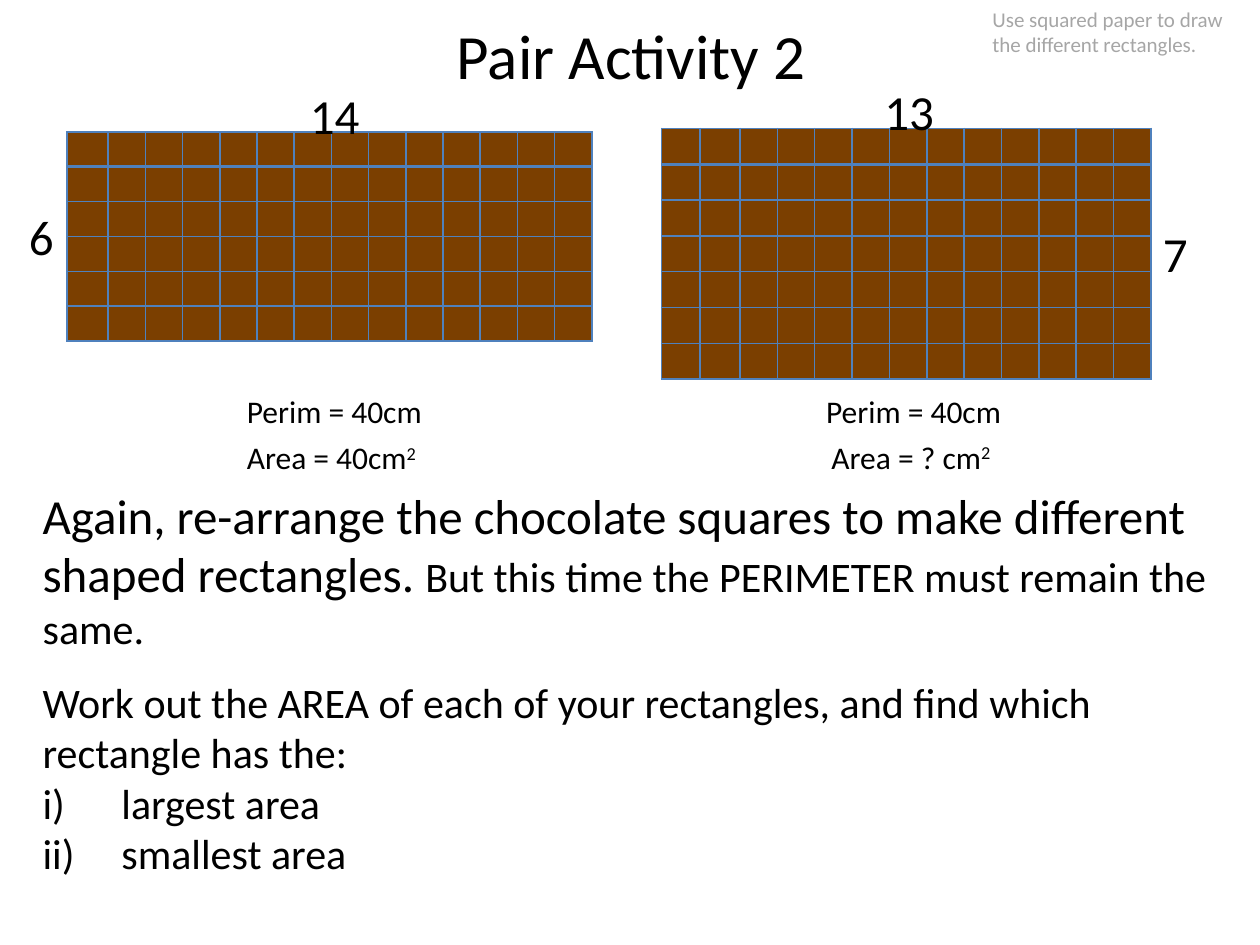
from lxml.etree import SubElement
from pptx import Presentation
from pptx.dml.color import RGBColor
from pptx.enum.text import MSO_AUTO_SIZE
from pptx.oxml.ns import qn
from pptx.util import Pt

BLACK, GREY, CHOCOLATE, GRID_BLUE = "000000", "A6A6A6", "7B3F00", "4F81BD"

# left, top, total width, row height, rows, columns, widths of the leading wider columns
BARS = [
    (38.2, 75.4, 300, 19.92, 6, 14, [23.6]),
    (378, 73.4, 280, 20.47, 7, 13, [22, 22.9]),
]

# Each paragraph is a list of spans: (text, size, superscript)
TITLE = [[("Pair Activity 2", 36, False)]]
HINT = [[("Use squared paper to draw the different rectangles.", 12, False)]]
TASK = [[
    ("Again, re-arrange the chocolate squares to make different shaped rectangles. ", 28, False),
    ("But this time the PERIMETER must remain the same.", 24, False),
]]
QUESTION = [
    [("Work out the AREA of each of your rectangles, and find which rectangle has the:", 24, False)],
    [("largest area", 24, False)],
    [("smallest area", 24, False)],
]
PERIMETER = [[("Perim = 40cm", 18, False)]]
LEFT_AREA = [[("Area = 40cm", 18, False), ("2", 18, True)]]
RIGHT_AREA = [[("Area = ? cm", 18, False), ("2", 18, True)]]

# paragraphs, (left, top, width, height)
LEFT_LABELS = [
    (PERIMETER, (134, 220.5, 116, 29)),
    (LEFT_AREA, (134, 247, 116, 29)),
    ([[("6", 28, False)]], (9.4, 114.5, 29, 41)),
    ([[("14", 28, False)]], (170, 45.5, 43, 41)),
]
RIGHT_LABELS = [
    (PERIMETER, (465, 220.5, 116, 29)),
    (RIGHT_AREA, (468, 246.5, 107, 29)),
    ([[("13", 28, False)]], (498.3, 43.2, 43, 41)),
    ([[("7", 28, False)]], (657.4, 124, 29, 41)),
]


def rgb(value):
    return RGBColor.from_string(value)


def add_text(shapes, paragraphs, place, color=BLACK, wrap=False, numbered_from=None):
    """Add a text box; paragraphs from index numbered_from get roman numerals."""
    box = shapes.add_textbox(*map(Pt, place))
    frame = box.text_frame
    frame.word_wrap = wrap
    frame.auto_size = MSO_AUTO_SIZE.SHAPE_TO_FIT_TEXT
    for index, spans in enumerate(paragraphs):
        para = frame.paragraphs[0] if index == 0 else frame.add_paragraph()
        for text, size, superscript in spans:
            span = para.add_run()
            span.text = text
            span.font.name = "Calibri"
            span.font.size = Pt(size)
            span.font.color.rgb = rgb(color)
            if superscript:
                span.font._element.set("baseline", "30000")
        if numbered_from is not None and index >= numbered_from:
            properties = para._p.get_or_add_pPr()
            properties.set("marL", str(Pt(45)))
            properties.set("indent", str(Pt(-45)))
            SubElement(properties, qn("a:buFont"), typeface="+mj-lt")
            SubElement(properties, qn("a:buAutoNum"), type="romanLcParenR")


def style_square(cell, bottom_width):
    cell.margin_left = cell.margin_right = cell.margin_top = cell.margin_bottom = 0
    SubElement(cell.text_frame.paragraphs[0]._p, qn("a:endParaRPr"), sz="800")
    properties = cell._tc.get_or_add_tcPr()
    for side, width in (("L", 1), ("R", 1), ("T", 1), ("B", bottom_width)):
        line = SubElement(properties, qn(f"a:ln{side}"), w=str(Pt(width)))
        SubElement(SubElement(line, qn("a:solidFill")), qn("a:srgbClr"), val=GRID_BLUE)
    cell.fill.solid()
    cell.fill.fore_color.rgb = rgb(CHOCOLATE)


def add_bar(shapes, left, top, width, row_height, rows, columns, wide):
    frame = shapes.add_table(rows, columns, Pt(left), Pt(top), Pt(width), Pt(row_height * rows))
    table = frame.table
    table.first_row = table.horz_banding = False
    regular = (width - sum(wide)) / (columns - len(wide))
    for index, column in enumerate(table.columns):
        column.width = Pt(wide[index] if index < len(wide) else regular)
    for index, row in enumerate(table.rows):
        row.height = Pt(row_height)
        for cell in row.cells:
            style_square(cell, 2 if index == 0 else 1)


def main():
    deck = Presentation()
    deck.slide_width, deck.slide_height = Pt(720), Pt(540)
    page = deck.slides.add_slide(deck.slide_layouts[6])

    add_text(page.shapes, TITLE, (254, 5.8, 216, 51))
    add_text(page.shapes, TASK, (17.3, 273.6, 689, 104.4), wrap=True)
    add_text(page.shapes, QUESTION, (17.3, 383, 688.3, 124), wrap=True, numbered_from=1)
    add_text(page.shapes, HINT, (560, 0, 160, 36), color=GREY, wrap=True)
    for bar in BARS:
        add_bar(page.shapes, *bar)
    right_group = page.shapes.add_group_shape()
    for shapes, labels in ((page.shapes, LEFT_LABELS), (right_group.shapes, RIGHT_LABELS)):
        for paragraphs, place in labels:
            add_text(shapes, paragraphs, place)
    deck.save("out.pptx")


if __name__ == "__main__":
    main()
